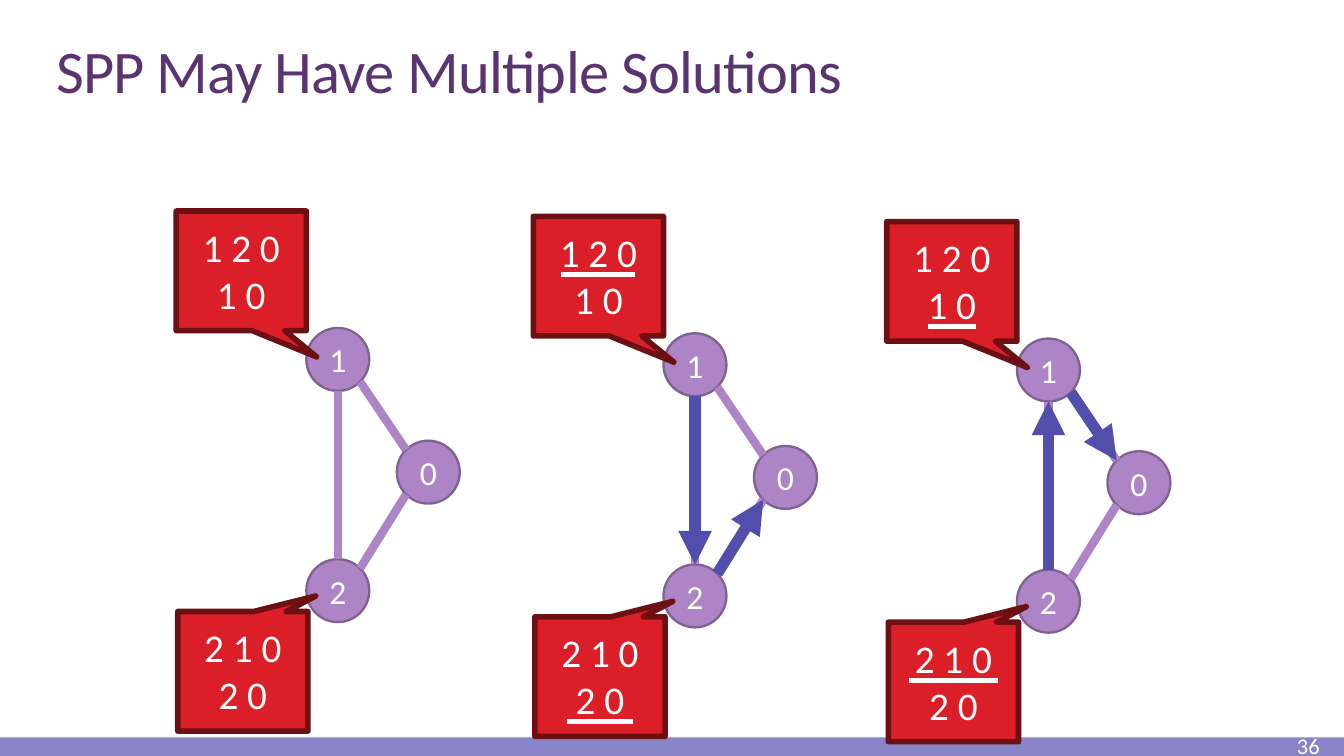
"""Build a slide showing three path assignments of one stable paths problem."""
import math
from typing import Any, NamedTuple, Optional

import lxml.etree
import pptx
import pptx.dml.color
import pptx.enum.shapes
import pptx.enum.text
import pptx.oxml.ns
import pptx.util

Cm = pptx.util.Cm
Pt = pptx.util.Pt
RGBColor = pptx.dml.color.RGBColor
Shape = pptx.enum.shapes.MSO_SHAPE
Anchor = pptx.enum.text.MSO_ANCHOR
Align = pptx.enum.text.PP_ALIGN

WHITE = RGBColor(0xFF, 0xFF, 0xFF)
TITLE_PURPLE = RGBColor(0x5A, 0x34, 0x71)
FOOTER_PURPLE = RGBColor(0x87, 0x84, 0xC7)
NODE_PURPLE = RGBColor(0xAD, 0x84, 0xC6)
NODE_BORDER = RGBColor(0x80, 0x62, 0x92)
ROUTE_BLUE = RGBColor(0x52, 0x4E, 0xAB)
CALLOUT_RED = RGBColor(0xDA, 0x1F, 0x28)
CALLOUT_BORDER = RGBColor(0x6D, 0x10, 0x14)

FONT = "Calibri"
NODE_SIZE = 1.19
CALLOUT_WIDTH, CALLOUT_HEIGHT = 2.46, 2.26
ROUTE_TEXT_INSET = 0.1
UNDERLINE_HEIGHTS = (1.1, 1.98)


class Point(NamedTuple):
    x: float
    y: float


class Underline(NamedTuple):
    row: int
    width: float


class Callout(NamedTuple):
    offset: Point
    tip: Point
    routes: tuple[str, str]


class Solution(NamedTuple):
    origin: Point
    arrows: tuple[tuple[str, str], ...]
    underlines: tuple[Optional[Underline], Optional[Underline]]


NODES = {"0": Point(4.17, 4.34), "1": Point(2.46, 2.21), "2": Point(2.46, 6.58)}
EDGES = (("0", "1"), ("2", "1"), ("0", "2"))
PORT_ANGLES = {("1", "0"): 45, ("0", "1"): 225, ("1", "2"): 90,
               ("2", "1"): 270, ("2", "0"): 315, ("0", "2"): 135}
CALLOUTS = (
    Callout(Point(0, 0), Point(0.58, 0.72), ("1 2 0", "1 0")),
    Callout(Point(0.03, 7.57), Point(0.56, -0.63), ("2 1 0", "2 0")),
)
SOLUTIONS = (
    Solution(Point(3.33, 3.99), (), (None, None)),
    Solution(Point(10.08, 4.09), (("2", "0"), ("1", "2")),
             (Underline(0, 1.4), Underline(1, 1.24))),
    Solution(Point(16.76, 4.19), (("2", "1"), ("1", "0")),
             (Underline(1, 0.91), Underline(0, 1.68))),
)


def shift(origin: Point, offset: Point) -> Point:
    return Point(origin.x + offset.x, origin.y + offset.y)


def write(paragraph: Any, text: str, size: float, color: RGBColor, align: Any) -> Any:
    paragraph.alignment = align
    run = paragraph.add_run()
    run.text = text
    run.font.name = FONT
    run.font.size = Pt(size)
    run.font.color.rgb = color
    return run


def add_frame(shapes: Any, corner: Point, width: float, height: float, anchor: Any) -> Any:
    frame = shapes.add_textbox(Cm(corner.x), Cm(corner.y), Cm(width), Cm(height)).text_frame
    frame.word_wrap = True
    frame.vertical_anchor = anchor
    return frame


def add_filled(shapes: Any, kind: Any, corner: Point, width: float, height: float,
               fill: RGBColor, border: Optional[RGBColor] = None, weight: float = 0) -> Any:
    shape = shapes.add_shape(kind, Cm(corner.x), Cm(corner.y), Cm(width), Cm(height))
    shape.shadow.inherit = False
    shape.fill.solid()
    shape.fill.fore_color.rgb = fill
    if border is None:
        shape.line.fill.background()
    else:
        shape.line.color.rgb = border
        shape.line.width = Pt(weight)
    return shape


def add_line(shapes: Any, start: Point, end: Point, color: RGBColor,
             weight: float, arrow: bool = False) -> None:
    line = shapes.add_connector(pptx.enum.shapes.MSO_CONNECTOR.STRAIGHT,
                                Cm(start.x), Cm(start.y), Cm(end.x), Cm(end.y))
    line.line.color.rgb = color
    line.line.width = Pt(weight)
    qn = pptx.oxml.ns.qn
    properties = line._element.spPr
    if arrow:
        lxml.etree.SubElement(properties.find(qn("a:ln")), qn("a:tailEnd"), type="triangle")
    lxml.etree.SubElement(properties, qn("a:effectLst"))


def add_node(shapes: Any, origin: Point, label: str) -> None:
    node = add_filled(shapes, Shape.OVAL, shift(origin, NODES[label]),
                      NODE_SIZE, NODE_SIZE, NODE_PURPLE, NODE_BORDER, 1.25)
    frame = node.text_frame
    frame.vertical_anchor = Anchor.MIDDLE
    frame.margin_left = frame.margin_right = 0
    write(frame.paragraphs[0], label, 18, WHITE, Align.CENTER)


def port(origin: Point, node: str, neighbour: str) -> Point:
    angle = math.radians(PORT_ANGLES[node, neighbour])
    radius = NODE_SIZE / 2
    corner = shift(origin, NODES[node])
    return Point(corner.x + radius * (1 + math.cos(angle)),
                 corner.y + radius * (1 + math.sin(angle)))


def add_callout(shapes: Any, origin: Point, callout: Callout,
                underline: Optional[Underline]) -> None:
    corner = shift(origin, callout.offset)
    members = shapes.add_group_shape().shapes
    bubble = add_filled(members, Shape.RECTANGULAR_CALLOUT, corner, CALLOUT_WIDTH,
                        CALLOUT_HEIGHT, CALLOUT_RED, CALLOUT_BORDER, 3)
    bubble.adjustments[0], bubble.adjustments[1] = callout.tip
    frame = add_frame(members, shift(corner, Point(0, ROUTE_TEXT_INSET)), CALLOUT_WIDTH,
                      CALLOUT_HEIGHT - 2 * ROUTE_TEXT_INSET, Anchor.TOP)
    for index, route in enumerate(callout.routes):
        paragraph = frame.add_paragraph() if index else frame.paragraphs[0]
        write(paragraph, route, 21, WHITE, Align.CENTER)
    if underline:
        start = shift(corner, Point((CALLOUT_WIDTH - underline.width) / 2,
                                    UNDERLINE_HEIGHTS[underline.row]))
        add_line(shapes, start, shift(start, Point(underline.width, 0)), WHITE, 3)


def add_solution(shapes: Any, solution: Solution) -> None:
    origin = solution.origin
    for label in NODES:
        add_node(shapes, origin, label)
    for first, second in EDGES:
        add_line(shapes, port(origin, first, second), port(origin, second, first),
                 NODE_PURPLE, 4.5)
    for source, target in solution.arrows:
        add_line(shapes, port(origin, source, target), port(origin, target, source),
                 ROUTE_BLUE, 6, arrow=True)
    for callout, underline in zip(CALLOUTS, solution.underlines):
        add_callout(shapes, origin, callout, underline)


def main() -> None:
    deck = pptx.Presentation()
    deck.slide_width, deck.slide_height = Cm(25.4), Cm(14.29)
    shapes = deck.slides.add_slide(deck.slide_layouts[6]).shapes

    add_filled(shapes, Shape.RECTANGLE, Point(0, 13.94), 25.4, 0.35, FOOTER_PURPLE)
    heading = add_frame(shapes, Point(0.81, 0.61), 24.08, 1.52, Anchor.BOTTOM).paragraphs[0]
    heading.line_spacing = 0.85
    title = write(heading, "SPP May Have Multiple Solutions", 32.4, TITLE_PURPLE, Align.LEFT)
    title.font._element.set("spc", "-40")
    page = add_frame(shapes, Point(22.45, 13.87), 2.74, 0.43, Anchor.MIDDLE)
    page.margin_top = page.margin_bottom = 0
    write(page.paragraphs[0], "36", 12, WHITE, Align.RIGHT)

    for solution in SOLUTIONS:
        add_solution(shapes, solution)
    deck.save("out.pptx")


if __name__ == "__main__":
    main()
